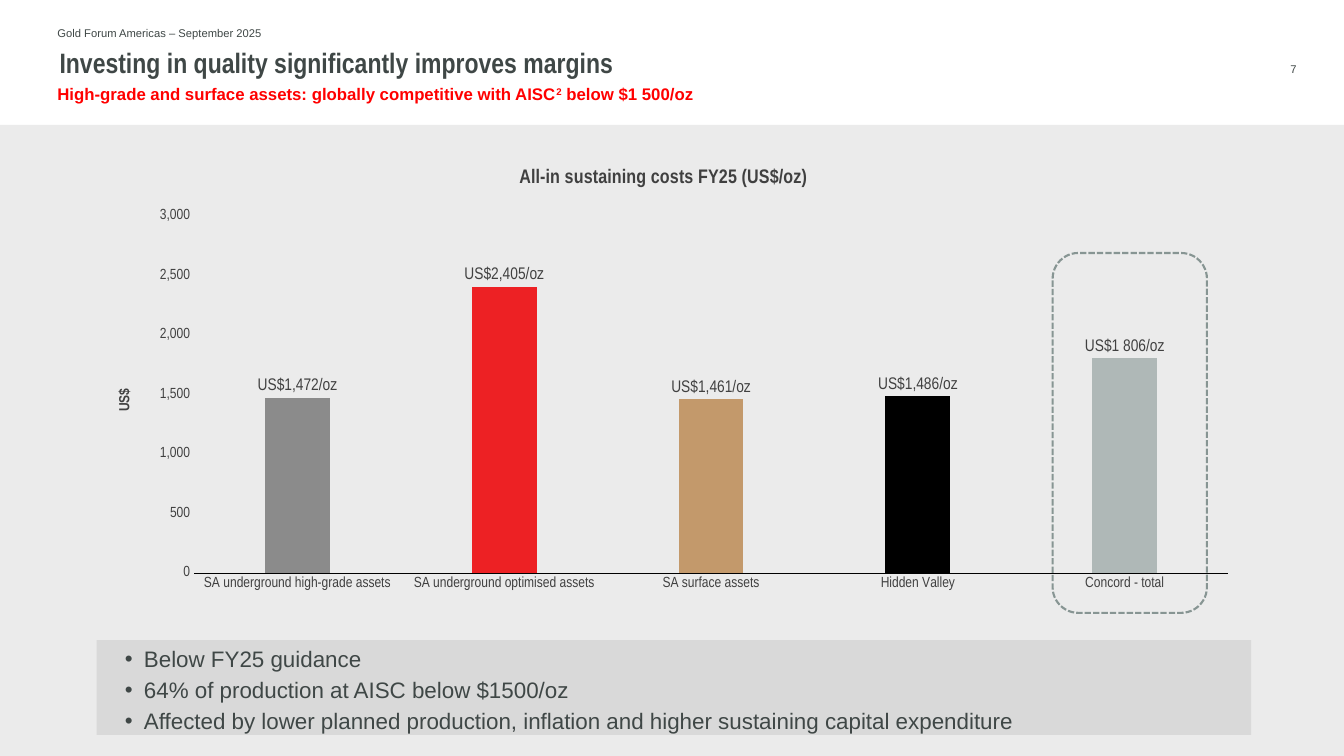
from lxml import etree
from pptx import Presentation
from pptx.chart.data import CategoryChartData as ChartData
from pptx.dml.color import RGBColor
from pptx.enum.chart import XL_CHART_TYPE as Kind, XL_LABEL_POSITION as Spot, XL_TICK_MARK as Tick
from pptx.enum.dml import MSO_LINE as Dash
from pptx.enum.shapes import MSO_SHAPE as Form
from pptx.enum.text import MSO_ANCHOR as Anchor, MSO_AUTO_SIZE as Fit, PP_ALIGN as Align
from pptx.oxml import parse_xml
from pptx.oxml.ns import nsdecls, qn
from pptx.util import Inches, Pt

WIDE, HIGH = Inches(13.33), Inches(7.5)
COL, ROW = WIDE / 100, HIGH / 100  # grid of 100 columns by 100 rows
INK, GREY, RED = "3F4746", "404040", "FF0000"
SANS, NARROW = "Arial", "Arial Narrow"
COSTS = [
    ("SA underground high-grade assets", 1472, "8B8B8B"),
    ("SA underground optimised assets", 2405, "ED2124"),
    ("SA surface assets", 1461, "C3996B"),
    ("Hidden Valley", 1486, "000000"),
    ("Concord - total", 1806, "AFB8B7"),
]
POINTS = [
    "Below FY25 guidance",
    "64% of production at AISC below $1500/oz",
    "Affected by lower planned production, inflation and higher sustaining capital expenditure",
]


def tint(code):
    return RGBColor.from_string(code)


def place(box):
    """Turn columns and rows into slide lengths."""
    x, y, w, h = box
    return [int(n) for n in (x * COL, y * ROW, w * COL, h * ROW)]


def style(font, size, color=INK, face=SANS, bold=False):
    font.size, font.name, font.bold = Pt(size), face, bold
    font.color.rgb = tint(color)


def write(para, text, *look, **more):
    run = para.add_run()
    run.text = text
    style(run.font, *look, **more)
    return run


def add_form(slide, form, box, fill=None):
    shape = slide.shapes.add_shape(form, *place(box))
    shape.shadow.inherit = False
    shape.line.fill.background()
    if fill:
        shape.fill.solid()
        shape.fill.fore_color.rgb = tint(fill)
    else:
        shape.fill.background()
    return shape


def add_text(slide, box, anchor=Anchor.TOP):
    frame = slide.shapes.add_textbox(*place(box)).text_frame
    frame.word_wrap = True
    frame.vertical_anchor = anchor
    return frame


def add_head(slide, box):
    x, y, w, h = box
    frame = add_text(slide, (x, y, 55.2, 3.2), Anchor.MIDDLE)
    write(frame.paragraphs[0], "Gold Forum Americas – September 2025", 8)

    title = slide.shapes.title
    title.left, title.top, title.width, title.height = place((x, y + 3.73, w, h))
    frame = title.text_frame
    frame.auto_size, frame.vertical_anchor = Fit.NONE, Anchor.TOP
    frame.margin_left = Inches(0.12)
    frame.margin_top = frame.margin_right = frame.margin_bottom = 0
    para = frame.paragraphs[0]
    para.alignment, para.line_spacing = Align.LEFT, 0.9
    write(para, "Investing in quality significantly improves margins", 20, face=NARROW, bold=True)

    para = add_text(slide, (x, y + 7.6, 60, 4)).paragraphs[0]
    write(para, "High-grade and surface assets: globally competitive with AISC", 12, RED, bold=True)
    power = write(para, "2", 12, RED, bold=True)
    power.font._element.set("baseline", "30000")
    write(para, " below $1 500/oz", 12, RED, bold=True)

    frame = add_text(slide, (x + w - 5.03, y + 4.67, 5.03, 3.2), Anchor.MIDDLE)
    frame.margin_left = frame.margin_right = frame.margin_top = frame.margin_bottom = 0
    frame.paragraphs[0].alignment = Align.RIGHT
    write(frame.paragraphs[0], "7", 8)


def pin(part, index, modes, **shares):
    """Fix a chart part at percentages of the chart's size."""
    for old in part.findall(qn("c:layout")):
        part.remove(old)
    layout = parse_xml(f"<c:layout {nsdecls('c')}><c:manualLayout/></c:layout>")
    spots = [(name, share / 100) for name, share in shares.items()]
    for name, val in modes + spots:
        etree.SubElement(layout[0], qn("c:" + name)).set("val", str(val))
    part.insert(index, layout)


def add_costs(slide, box):
    data = ChartData(number_format="#,##0")
    names, vals, _ = zip(*COSTS)
    data.categories = names
    data.add_series("Series 1", vals)
    chart = slide.shapes.add_chart(Kind.COLUMN_CLUSTERED, *place(box), data).chart
    style(chart.font, 10.5, GREY, NARROW)
    chart.has_legend = False
    chart.has_title = True
    title = chart.chart_title
    write(title.text_frame.paragraphs[0],
          "All-in sustaining costs FY25 (US$/oz)", 14, GREY, NARROW, True)
    edges = [("xMode", "edge"), ("yMode", "edge")]
    pin(title._element, 1, edges, x=36.3, y=1.4)
    pin(chart._chartSpace.chart.plotArea, 0, [("layoutTarget", "inner")] + edges,
        x=8.43, y=13.5, w=89.57, h=80.5)

    cats, axis = chart.category_axis, chart.value_axis
    for each in (cats, axis):
        each.major_tick_mark = each.minor_tick_mark = Tick.NONE
        each.has_major_gridlines = False
        style(each.tick_labels.font, 10.5, GREY, NARROW)
    cats.format.line.color.rgb = tint("000000")
    cats.format.line.width = Pt(0.75)
    axis.format.line.fill.background()
    axis.minimum_scale, axis.maximum_scale, axis.major_unit = 0, 3000, 500
    axis.tick_labels.number_format = "#,##0"
    axis.tick_labels.number_format_is_linked = False
    frame = axis.axis_title.text_frame
    frame._txBody.bodyPr.set("rot", "-5400000")
    write(frame.paragraphs[0], "US$", 10.5, GREY, NARROW, True)

    plot = chart.plots[0]
    plot.gap_width, plot.overlap, plot.vary_by_categories = 219, -27, False
    bars = plot.series[0]
    for i, (_, _, color) in enumerate(COSTS):
        fill = bars.points[i].format.fill
        fill.solid()
        fill.fore_color.rgb = tint(color)
    labels = bars.data_labels
    labels.show_value, labels.position = True, Spot.OUTSIDE_END
    labels.number_format, labels.number_format_is_linked = '"US$"#,##0"/oz"', False
    style(labels.font, 12, GREY, NARROW)
    total = bars.points[len(COSTS) - 1].data_label
    write(total.text_frame.paragraphs[0], "US$1 806/oz", 12, GREY, NARROW)
    total.position = Spot.OUTSIDE_END


def add_ring(slide, box):
    """Mark the total with a dashed outline."""
    ring = add_form(slide, Form.ROUNDED_RECTANGLE, box)
    ring.line.color.rgb = tint("879593")
    ring.line.width = Pt(1.5)
    ring.line.dash_style = Dash.SQUARE_DOT


def add_notes(slide, box):
    x, y, w, h = box
    add_form(slide, Form.RECTANGLE, box, "D9D9D9")
    frame = add_text(slide, (x + 1.35, y, w - 5.7, h + 0.67))
    for i, text in enumerate(POINTS):
        para = frame.paragraphs[0] if i == 0 else frame.add_paragraph()
        props = para._p.get_or_add_pPr()
        props.set("marL", str(Inches(0.19)))
        props.set("indent", str(-Inches(0.19)))
        etree.SubElement(props, qn("a:buFont")).set("typeface", SANS)
        etree.SubElement(props, qn("a:buChar")).set("char", "•")
        para.space_before = Pt(3 if i else 0)
        write(para, text, 16)


def main():
    deck = Presentation()
    deck.slide_width, deck.slide_height = WIDE, HIGH
    slide = deck.slides.add_slide(deck.slide_layouts[5])
    back = add_form(slide, Form.RECTANGLE, (0, 16.53, 100, 83.47), "EBEBEB")
    slide.shapes._spTree.insert(2, back._element)
    add_costs(slide, (7.2, 20.67, 85.9, 58.67))
    add_head(slide, (3.53, 2.8, 92.95, 12.4))
    add_notes(slide, (7.2, 84.67, 85.9, 12.53))
    add_ring(slide, (78.32, 33.47, 11.48, 47.6))
    deck.save("out.pptx")


if __name__ == "__main__":
    main()
